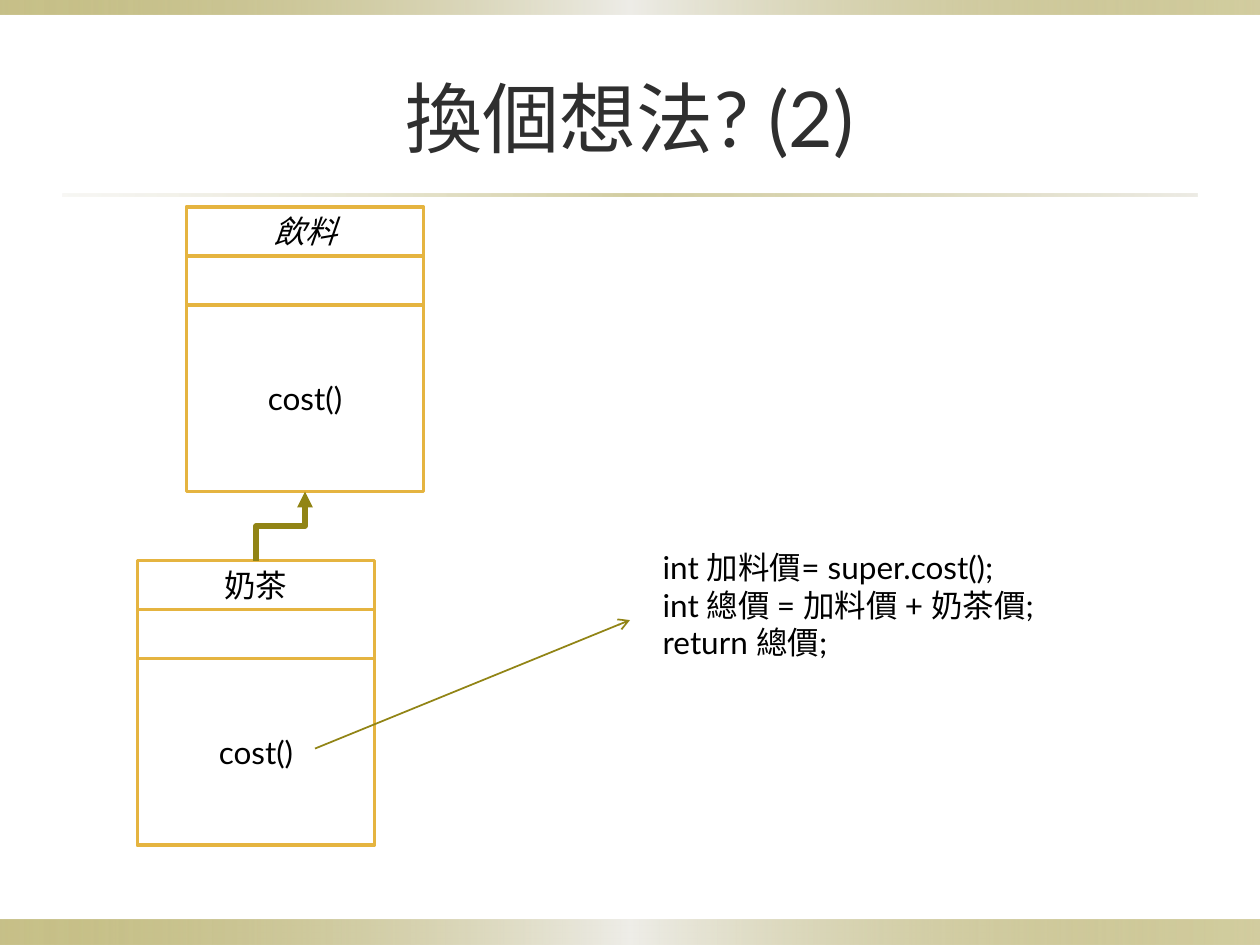
from dataclasses import dataclass

from pptx import Presentation
from pptx.dml.color import RGBColor
from pptx.enum.shapes import MSO_CONNECTOR, MSO_SHAPE
from pptx.enum.text import MSO_ANCHOR, MSO_AUTO_SIZE, PP_ALIGN
from pptx.oxml import parse_xml
from pptx.oxml.ns import nsdecls
from pptx.util import Cm, Pt

COLORS = {
    "paper": "FFFFFF",
    "ink": "000000",
    "heading": "2F2F2F",
    "border": "E5B440",
    "olive": "918415",
    "mist": "EEEDE8",
    "sand": "DCD9CC",
}
BODY_FONT = {"name": "Lato", "size": Pt(18), "italic": False}
TITLE_FONT = {"name": "Lato", "size": Pt(44), "bold": False}
FRAME = {"vertical_anchor": MSO_ANCHOR.MIDDLE, "word_wrap": True}

CLASS_WIDTH, ROW_HEIGHT, METHODS_HEIGHT = 4.78, 0.99, 3.76


@dataclass
class Band:
    left: float
    top: float
    width: float
    height: float
    stops: tuple


@dataclass
class UmlClass:
    name: str
    method: str
    left: float
    top: float
    abstract: bool = False


def apply(target, values: dict) -> None:
    for key, value in values.items():
        setattr(target, key, value)


def rgb(color: str) -> RGBColor:
    return RGBColor.from_string(COLORS[color])


def write(frame, lines: list, font: dict, color: str, align) -> None:
    frame.text = "\n".join(lines)
    for paragraph in frame.paragraphs:
        paragraph.alignment = align
        for run in paragraph.runs:
            apply(run.font, font)
            run.font.color.rgb = rgb(color)


def draw_band(shapes, band: Band) -> None:
    strip = shapes.add_shape(MSO_SHAPE.RECTANGLE, Cm(band.left), Cm(band.top),
                             Cm(band.width), Cm(band.height))
    strip.shadow.inherit = False
    strip.line.fill.background()
    stops = "".join(
        f'<a:gs pos="{place * 1000}"><a:srgbClr val="{COLORS[color]}">'
        f'<a:alpha val="{alpha * 1000}"/></a:srgbClr></a:gs>'
        for place, color, alpha in band.stops)
    gradient = parse_xml(f'<a:gradFill {nsdecls("a")} rotWithShape="1"><a:gsLst>{stops}'
                         '</a:gsLst><a:lin ang="0" scaled="0"/></a:gradFill>')
    strip.element.spPr.find("{*}prstGeom").addnext(gradient)


def draw_class(shapes, uml: UmlClass) -> list:
    group = shapes.add_group_shape()
    rows = [(uml.name, ROW_HEIGHT, uml.abstract), ("", ROW_HEIGHT, False),
            (uml.method, METHODS_HEIGHT, False)]
    compartments, top = [], uml.top
    for label, height, italic in rows:
        compartment = group.shapes.add_shape(MSO_SHAPE.RECTANGLE, Cm(uml.left), Cm(top),
                                             Cm(CLASS_WIDTH), Cm(height))
        compartment.shadow.inherit = False
        compartment.fill.solid()
        compartment.fill.fore_color.rgb = rgb("paper")
        compartment.line.color.rgb = rgb("border")
        compartment.line.width = Pt(2)
        apply(compartment.text_frame, FRAME)
        if label:
            write(compartment.text_frame, [label], {**BODY_FONT, "italic": italic},
                  "ink", PP_ALIGN.CENTER)
        compartments.append(compartment)
        top += height
    return compartments


def style_arrow(arrow, width: float, head: str) -> None:
    arrow.line.color.rgb = rgb("olive")
    arrow.line.width = Pt(width)
    arrow.get_or_add_ln().append(parse_xml(f'<a:tailEnd {nsdecls("a")} type="{head}"/>'))
    arrow.element.spPr.append(parse_xml(f'<a:effectLst {nsdecls("a")}/>'))


def draw_inheritance(shapes, child, parent) -> None:
    arrow = shapes.add_connector(MSO_CONNECTOR.ELBOW, 0, 0, 0, 0)
    arrow.begin_connect(child, 0)
    arrow.end_connect(parent, 2)
    rise = child.top - parent.top - parent.height
    shift = parent.left - child.left
    middle_x = (child.left + parent.left + child.width) // 2
    middle_y = child.top - rise // 2
    apply(arrow, {"left": middle_x - rise // 2, "top": middle_y - shift // 2,
                  "width": rise, "height": shift})
    turn = arrow.element.spPr.find("{*}xfrm")
    for flip in ("flipH", "flipV"):
        turn.attrib.pop(flip, None)
    turn.set("rot", str(270 * 60000))
    style_arrow(arrow, 3, "triangle")


def main() -> None:
    deck = Presentation()
    apply(deck, {"slide_width": Cm(25.4), "slide_height": Cm(19.05)})
    slide = deck.slides.add_slide(deck.slide_layouts[5])
    shapes = slide.shapes

    edge = ((0, "olive", 50), (50, "mist", 100), (100, "olive", 40))
    rule = ((0, "sand", 20), (50, "olive", 40), (100, "sand", 50))
    for band in (Band(0, 18.54, 25.4, 0.51, edge), Band(0, 0, 25.4, 0.3, edge),
                 Band(1.27, 3.91, 22.86, 0.05, rule)):
        draw_band(shapes, band)

    heading = shapes.title
    apply(heading, {"left": Cm(1.27), "top": Cm(0.76), "width": Cm(22.86), "height": Cm(3.18)})
    apply(heading.text_frame, FRAME)
    write(heading.text_frame, ["換個想法? (2)"], TITLE_FONT, "heading", PP_ALIGN.CENTER)

    drink = draw_class(shapes, UmlClass("飲料", "cost()", 3.76, 4.17, abstract=True))
    milk_tea = draw_class(shapes, UmlClass("奶茶", "cost()", 2.77, 11.3))

    call = shapes.add_connector(MSO_CONNECTOR.STRAIGHT, Cm(6.35), Cm(15.09), Cm(12.7), Cm(12.5))
    style_arrow(call, 1, "arrow")

    code = shapes.add_textbox(Cm(13.11), Cm(10.92), Cm(8.05), Cm(2.57)).text_frame
    apply(code, {"word_wrap": True, "auto_size": MSO_AUTO_SIZE.SHAPE_TO_FIT_TEXT})
    write(code, ["int 加料價= super.cost();", "int 總價 = 加料價 + 奶茶價;", "return 總價;"],
          BODY_FONT, "ink", PP_ALIGN.LEFT)

    draw_inheritance(shapes, milk_tea[0], drink[-1])
    deck.save("out.pptx")


if __name__ == "__main__":
    main()
